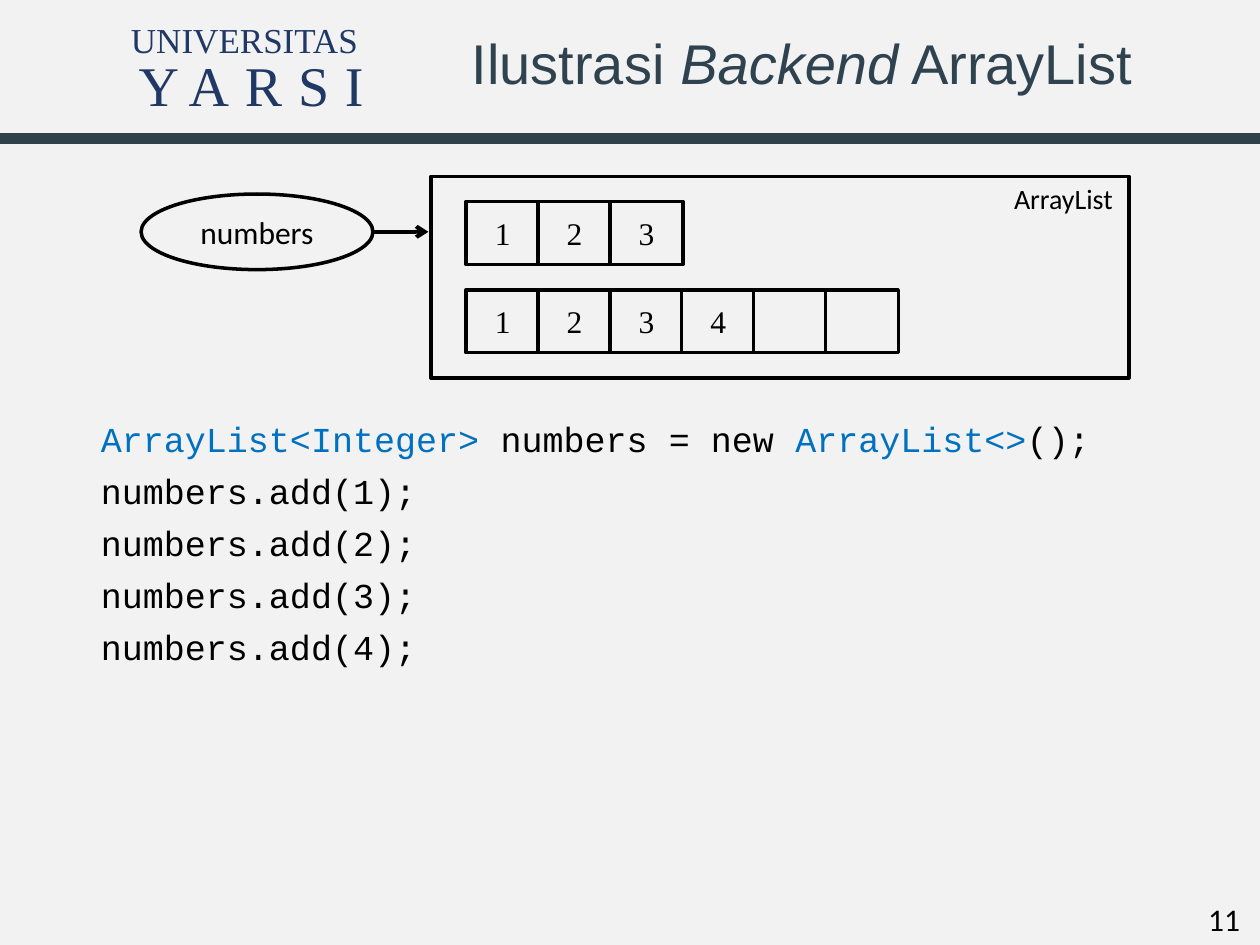
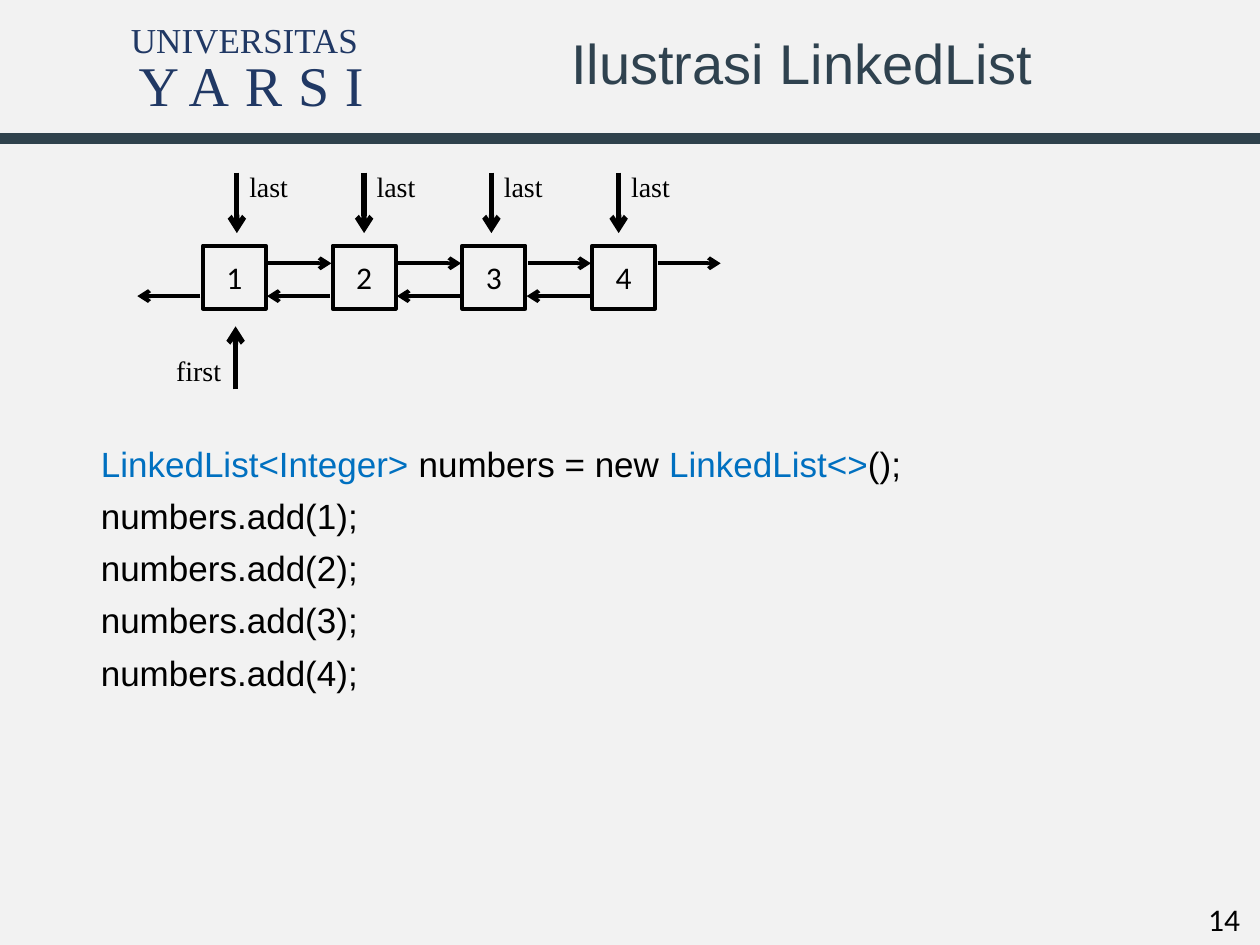
from dataclasses import dataclass

from pptx import Presentation
from pptx.dml.color import RGBColor
from pptx.enum.shapes import MSO_CONNECTOR, MSO_SHAPE
from pptx.enum.text import MSO_ANCHOR, MSO_AUTO_SIZE, PP_ALIGN
from pptx.oxml.ns import qn
from pptx.util import Inches, Pt
from lxml.etree import SubElement


@dataclass(frozen=True)
class Theme:
    # Colours
    paper: str = "F2F2F2"
    ink: str = "000000"
    head: str = "2F424F"
    band: str = "2F424C"
    brand: str = "203864"
    kind: str = "0070C0"
    # Fonts
    sans: str = "Arial"
    plain: str = "Calibri"
    serif: str = "Times New Roman"
    mono: str = "Courier New"
    # Type sizes
    big: int = 32
    code: int = 20
    text: int = 18
    note: int = 16


def write(para, text, size, font, color, italic=None, track=None):
    """Add one formatted run to a paragraph."""
    run = para.add_run()
    run.text = text
    run.font.size = Pt(size)
    run.font.name = font
    run.font.italic = italic
    run.font.color.rgb = RGBColor.from_string(color)
    if track:
        run.font._element.set("spc", str(track * 100))


def place(shape, left, top, width, height):
    shape.left, shape.top = Inches(left), Inches(top)
    shape.width, shape.height = Inches(width), Inches(height)


class Deck:
    def __init__(self, theme):
        self.theme = theme
        self.file = Presentation()
        self.file.slide_width = Inches(10)
        self.file.slide_height = Inches(7.5)
        self.slide = None

    def start(self, number, *title):
        """Open a slide with its header, title and number."""
        t = self.theme
        self.slide = self.file.slides.add_slide(self.file.slide_layouts[1])
        fill = self.slide.background.fill
        fill.solid()
        fill.fore_color.rgb = RGBColor.from_string(t.paper)

        self.label("UNIVERSITAS", 0.93, 0.1, 2.02, 0.44, size=t.code,
                   color=t.brand, align=PP_ALIGN.CENTER)
        self.label("YARSI", 0.93, 0.35, 2.13, 0.64, size=t.big,
                   color=t.brand, align=PP_ALIGN.CENTER, track=9)
        self.line(0, 1.1, 10, 1.1, 6, color=t.band, arrow=False)
        self.label(str(number), 9.49, 7.09, 0.5, 0.4, size=t.text, font=t.plain)

        # Every second part of the title is italic
        shape = self.slide.shapes.title
        place(shape, 3.24, 0.23, 6.25, 0.6)
        frame = shape.text_frame
        frame.auto_size = MSO_AUTO_SIZE.NONE
        frame.vertical_anchor = MSO_ANCHOR.MIDDLE
        para = frame.paragraphs[0]
        para.alignment = PP_ALIGN.CENTER
        para.line_spacing = 0.9
        for i, part in enumerate(title):
            write(para, part, t.big, t.sans, t.head, italic=i % 2 == 1)

    def label(self, text, left, top, width, height, size=None, font=None,
              color=None, align=PP_ALIGN.LEFT, track=None):
        t = self.theme
        box = self.slide.shapes.add_textbox(
            Inches(left), Inches(top), Inches(width), Inches(height))
        frame = box.text_frame
        frame.word_wrap = False
        frame.auto_size = MSO_AUTO_SIZE.SHAPE_TO_FIT_TEXT
        para = frame.paragraphs[0]
        para.alignment = align
        write(para, text, size or t.note, font or t.serif, color or t.ink,
              track=track)

    def shape(self, left, top, width, height, text="", font=None,
              kind=MSO_SHAPE.RECTANGLE, weight=2):
        t = self.theme
        shape = self.slide.shapes.add_shape(
            kind, Inches(left), Inches(top), Inches(width), Inches(height))
        shape.shadow.inherit = False
        shape.fill.solid()
        shape.fill.fore_color.rgb = RGBColor.from_string(t.paper)
        shape.line.color.rgb = RGBColor.from_string(t.ink)
        shape.line.width = Pt(weight)
        if text:
            frame = shape.text_frame
            frame.vertical_anchor = MSO_ANCHOR.MIDDLE
            para = frame.paragraphs[0]
            para.alignment = PP_ALIGN.CENTER
            write(para, text, t.text, font or t.plain, t.ink)

    def line(self, x1, y1, x2, y2, weight=2.25, color=None, arrow=True):
        line = self.slide.shapes.add_connector(
            MSO_CONNECTOR.STRAIGHT, Inches(x1), Inches(y1), Inches(x2), Inches(y2))
        line.line.color.rgb = RGBColor.from_string(color or self.theme.ink)
        line.line.width = Pt(weight)
        props = line._element.spPr
        if arrow:
            SubElement(props.find(qn("a:ln")), qn("a:tailEnd"), type="arrow")
        SubElement(props, qn("a:effectLst"))

    def code(self, name, top, font):
        """Declare a list of the named class and add four numbers to it."""
        t = self.theme
        body = self.slide.placeholders[1]
        place(body, 0.7, top, 8.54, 2.01)
        frame = body.text_frame
        frame.auto_size = MSO_AUTO_SIZE.NONE
        rows = [[(f"{name}<Integer>", t.kind), (" numbers = new ", t.ink),
                 (f"{name}<>", t.kind), ("();", t.ink)]]
        rows += [[(f"numbers.add({n});", t.ink)] for n in range(1, 5)]
        for i, row in enumerate(rows):
            para = frame.add_paragraph() if i else frame.paragraphs[0]
            props = para._p.get_or_add_pPr()
            props.set("marL", "0")
            props.set("indent", "0")
            SubElement(props, qn("a:buNone"))
            para.line_spacing = 0.9
            para.space_before = Pt(8.2 if i else 0)
            for text, color in row:
                write(para, text, t.code, font, color)


def array(deck):
    t = deck.theme
    deck.start(11, "Ilustrasi ", "Backend", " ArrayList")
    deck.code("ArrayList", 3.3, t.mono)

    # Variable pointing at the list
    deck.shape(3.42, 1.4, 5.54, 1.6)
    deck.label("ArrayList", 7.95, 1.39, 1, 0.37, font=t.plain)
    deck.shape(1.12, 1.54, 1.84, 0.6, "numbers", kind=MSO_SHAPE.OVAL)
    deck.line(2.96, 1.84, 3.4, 1.84)

    # Full array, then the larger one that replaces it
    for top, cells in ((1.6, ["1", "2", "3"]),
                       (2.3, ["1", "2", "3", "4", "", ""])):
        for i, cell in enumerate(cells):
            deck.shape(3.7 + 0.57 * i, top, 0.58, 0.5, cell, t.serif)


def linked(deck):
    t = deck.theme
    deck.start(14, "Ilustrasi LinkedList")
    deck.code("LinkedList", 3.5, t.sans)

    for i in range(4):
        # Node with its next and previous links
        step = 1.03 * i
        deck.shape(1.61 + step, 1.95, 0.5, 0.5, str(i + 1), weight=2.25)
        deck.line(2.13 + step, 2.09, 2.63 + step, 2.09)
        deck.line(1.59 + step, 2.35, 1.09 + step, 2.35)
        # Pointer to the last node
        x = 1.88 + 1.01 * i
        deck.line(x, 1.37, x, 1.85, 3)
        deck.label("last", x, 1.3, 0.52, 0.37)

    # Pointer to the first node
    deck.line(1.87, 3.09, 1.87, 2.59, 3)
    deck.label("first", 1.3, 2.76, 0.57, 0.37)


def main():
    deck = Deck(Theme())
    array(deck)
    linked(deck)
    deck.file.save("out.pptx")


if __name__ == "__main__":
    main()
